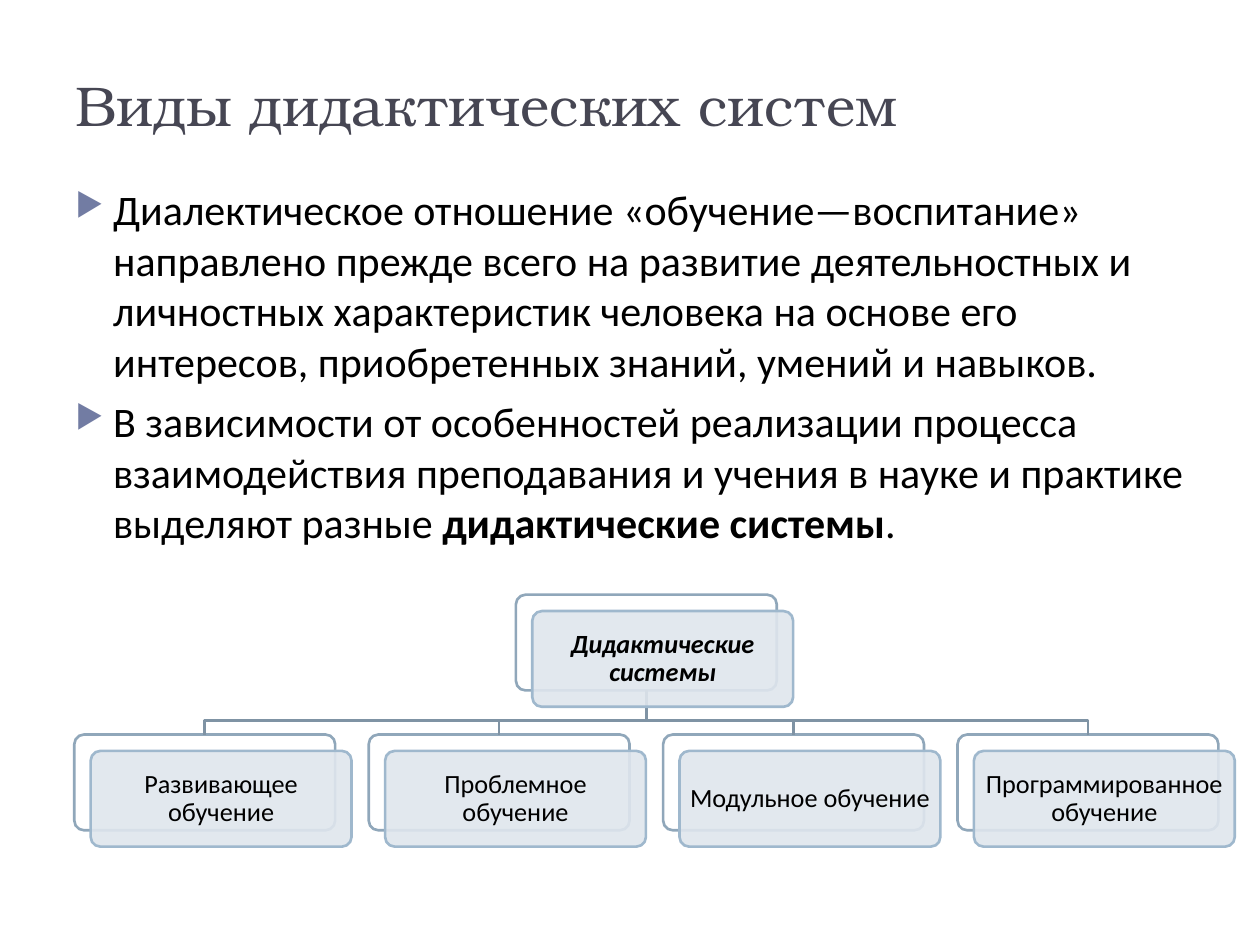
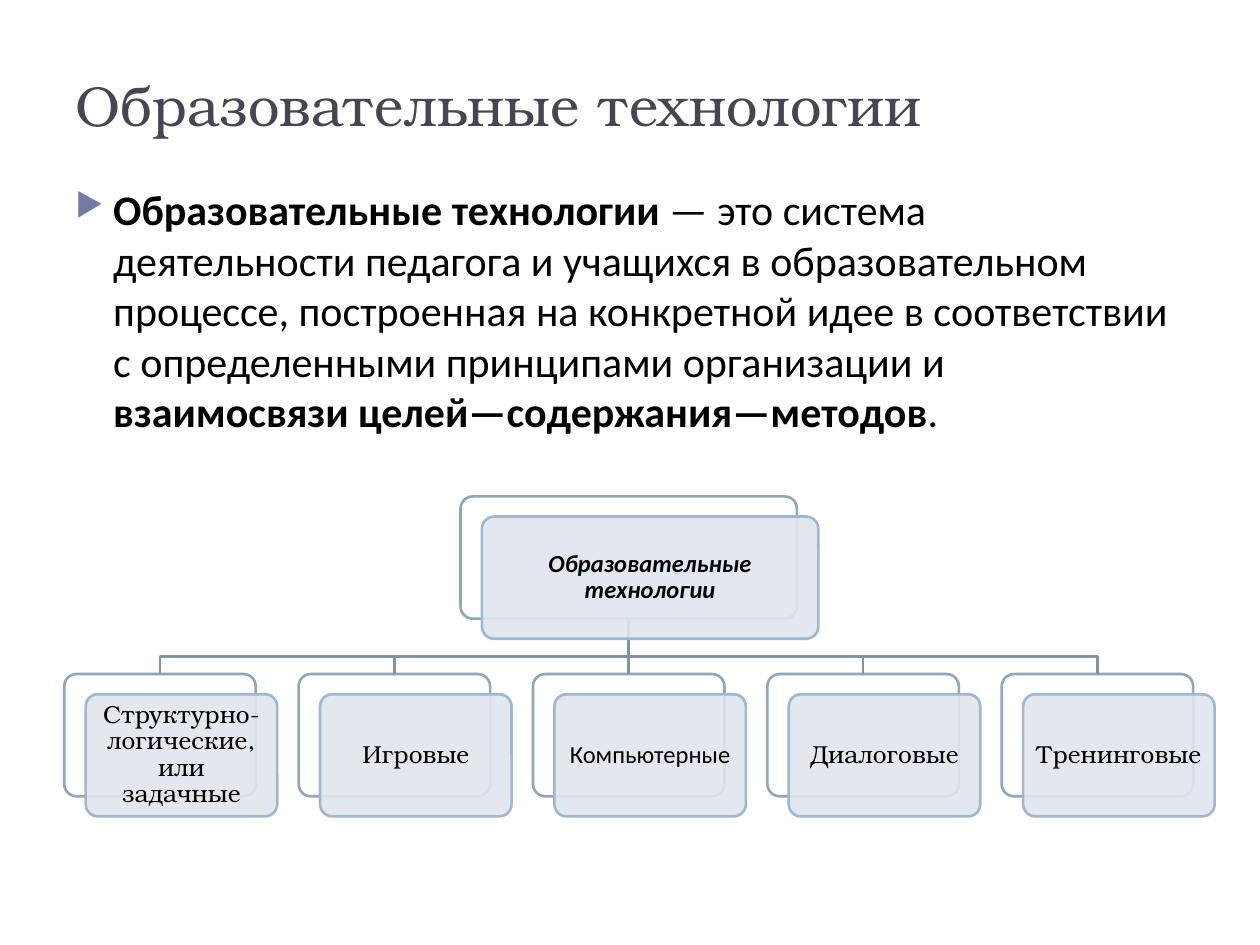
from lxml import etree
from pptx import Presentation
from pptx import util as u
from pptx.dml.color import RGBColor
from pptx.enum import shapes, text
from pptx.oxml.ns import qn

COLORS = {
    "title": "464653",
    "text": "000000",
    "bullet": "727CA3",
    "link": "7F93A4",
    "back_fill": "FFFFFF",
    "back_line": "90A7BA",
    "front_fill": "DFE6ED",
    "front_line": "9FB8CD",
}
SANS, SERIF = "Calibri", "TeX Gyre Bonum"
BEND = 0.68

topics = [
    {
        "title": "Виды дидактических систем",
        "body_size": (9, 3.05),
        "body": [
            [("Диалектическое отношение «обучение—воспитание» направлено прежде всего на "
              "развитие деятельностных и личностных характеристик человека на основе его "
              "интересов, приобретенных знаний, умений и навыков.", False)],
            [("В зависимости от особенностей реализации процесса взаимодействия "
              "преподавания и учения в науке и практике выделяют разные ", False),
             ("дидактические системы", True), (".", False)],
        ],
        "root": "Дидактические системы",
        "root_top": 4.72, "root_width": 2.07,
        "branches": [("Развивающее обучение", SANS), ("Проблемное обучение", SANS),
                     ("Модульное обучение", SANS), ("Программированное обучение", SANS)],
        "first": 0.59, "last": 7.6, "row_top": 5.83,
        "width": 2.07, "height": 0.76, "offset": (0.13, 0.13), "size": 15,
    },
    {
        "title": "Образовательные технологии",
        "body_size": (8.88, 2.11),
        "body": [
            [("Образовательные технологии ", True),
             ("— это система деятельности педагога и учащихся в образовательном процессе, "
              "построенная на конкретной идее в соответствии с определенными принципами "
              "организации и ", False),
             ("взаимосвязи целей—содержания—методов", True), (".", False)],
        ],
        "root": "Образовательные технологии",
        "root_top": 3.94, "root_width": 2.67,
        "branches": [("Структурно-логические, или задачные", SERIF), ("Игровые", SERIF),
                     ("Компьютерные", SANS), ("Диалоговые", SERIF), ("Тренинговые", SERIF)],
        "first": 0.51, "last": 7.95, "row_top": 5.35,
        "width": 1.52, "height": 0.97, "offset": (0.17, 0.16), "size": 14,
    },
]


def add_run(paragraph, words, font, size, color="text", bold=False, italic=False):
    run = paragraph.add_run()
    run.text = words
    run.font.name, run.font.size = font, u.Pt(size)
    run.font.bold, run.font.italic = bold, italic
    run.font.color.rgb = RGBColor.from_string(COLORS[color])


def add_card(slide, layer, left, top, width, height):
    card = slide.shapes.add_shape(shapes.MSO_SHAPE.ROUNDED_RECTANGLE, u.Inches(left),
                                  u.Inches(top), u.Inches(width), u.Inches(height))
    card.adjustments[0] = 0.1
    card.shadow.inherit = False
    card.fill.solid()
    card.fill.fore_color.rgb = RGBColor.from_string(COLORS[layer + "_fill"])
    card.line.color.rgb = RGBColor.from_string(COLORS[layer + "_line"])
    card.line.width = u.Pt(1.5)
    return card


deck = Presentation()
deck.slide_width, deck.slide_height = u.Inches(10), u.Inches(7.5)

for topic in topics:
    slide = deck.slides.add_slide(deck.slide_layouts[6])

    heading = slide.shapes.add_textbox(u.Inches(0.5), u.Inches(0.13),
                                       u.Inches(6.94), u.Inches(1.01)).text_frame
    heading.word_wrap = True
    heading.vertical_anchor = text.MSO_ANCHOR.BOTTOM
    add_run(heading.paragraphs[0], topic["title"], SERIF, 32, "title")

    body_width, body_height = topic["body_size"]
    body = slide.shapes.add_textbox(u.Inches(0.5), u.Inches(1.41),
                                    u.Inches(body_width), u.Inches(body_height)).text_frame
    body.word_wrap = True
    for number, pieces in enumerate(topic["body"]):
        point = body.add_paragraph() if number else body.paragraphs[0]
        point.space_before = u.Pt(6)
        props = point._p.get_or_add_pPr()
        props.set("marL", str(u.Inches(0.3)))
        props.set("indent", str(u.Inches(-0.3)))
        bullet_color = etree.SubElement(props, qn("a:buClr"))
        etree.SubElement(bullet_color, qn("a:srgbClr"), val=COLORS["bullet"])
        etree.SubElement(props, qn("a:buSzPct"), val="76000")
        etree.SubElement(props, qn("a:buChar"), char="▶")
        for words, bold in pieces:
            add_run(point, words, SANS, 24, bold=bold)

    width, height, row_top = topic["width"], topic["height"], topic["row_top"]
    root_top, root_width = topic["root_top"], topic["root_width"]
    pitch = (topic["last"] - topic["first"]) / (len(topic["branches"]) - 1)
    center = (topic["first"] + topic["last"] + width) / 2
    root_left = center - root_width / 2
    root_bottom = root_top + height
    bend = root_bottom + BEND * (row_top - root_bottom)

    nodes = [(topic["root"], SANS, root_left, root_top, root_width, True)]
    for column, (label, font) in enumerate(topic["branches"]):
        nodes.append((label, font, topic["first"] + column * pitch, row_top, width, False))

    backs = [add_card(slide, "back", left, top, node_width, height)
             for _, _, left, top, node_width, _ in nodes]

    for back, (_, _, left, _, node_width, _) in zip(backs[1:], nodes[1:]):
        target = left + node_width / 2
        if abs(target - center) < 0.01:
            link = slide.shapes.add_connector(shapes.MSO_CONNECTOR.STRAIGHT, 0, 0, 0, 0)
            link.begin_connect(backs[0], 2)
            link.end_connect(back, 0)
        else:
            start, *turns = [(u.Inches(x), u.Inches(y)) for x, y in
                             [(center, root_bottom), (center, bend),
                              (target, bend), (target, row_top)]]
            route = slide.shapes.build_freeform(*start)
            route.add_line_segments(turns, close=False)
            link = route.convert_to_shape()
            link.fill.background()
        link.line.color.rgb = RGBColor.from_string(COLORS["link"])
        link.line.width = u.Pt(1.5)
        etree.SubElement(link._element.spPr, qn("a:effectLst"))

    shift_x, shift_y = topic["offset"]
    for label, font, left, top, node_width, is_root in nodes:
        front = add_card(slide, "front", left + shift_x, top + shift_y, node_width, height)
        tint = front._element.spPr.find(qn("a:solidFill")).find(qn("a:srgbClr"))
        etree.SubElement(tint, qn("a:alpha"), val="90000")
        frame = front.text_frame
        frame.word_wrap = True
        frame.vertical_anchor = text.MSO_ANCHOR.MIDDLE
        frame.margin_left = frame.margin_right = u.Inches(0.05)
        frame.margin_top = frame.margin_bottom = u.Inches(0.05)
        caption = frame.paragraphs[0]
        caption.alignment = text.PP_ALIGN.CENTER
        caption.line_spacing = 0.9
        add_run(caption, label, font, topic["size"], bold=is_root, italic=is_root)

deck.save("out.pptx")
